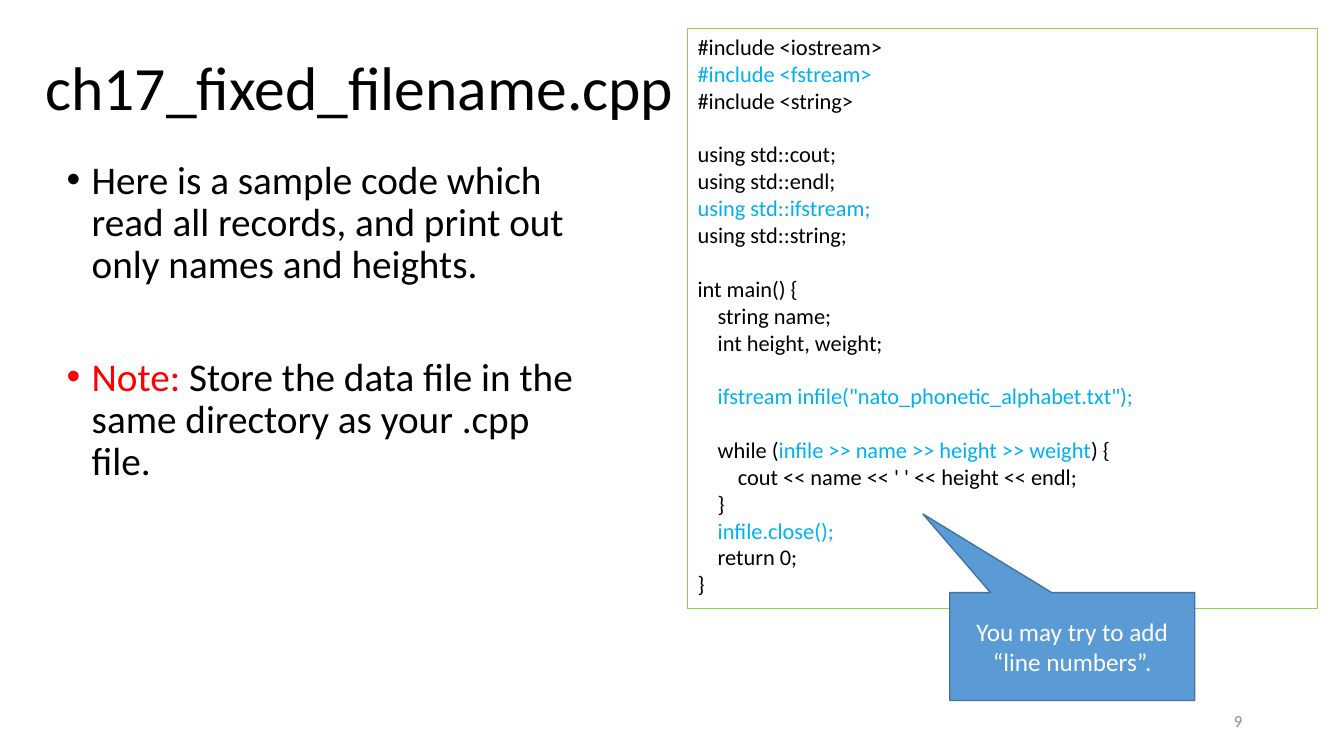
from dataclasses import dataclass

import pptx
import pptx.dml.color
import pptx.enum.shapes
import pptx.enum.text
import pptx.util

ALIGN = pptx.enum.text.PP_ALIGN
ANCHOR = pptx.enum.text.MSO_ANCHOR
Pt = pptx.util.Pt

PX = 9144  # EMU in one px, 100 px to the inch
FONT = "Calibri"
BLACK, RED, CYAN, GREY, WHITE = "000000", "FF0000", "00B0F0", "8C8C8C", "FFFFFF"
GREEN, BLUE, NAVY = "92D050", "5B9BD5", "43739E"
CODE_SIZE, CODE_GAP, CODE_STEP = 16, 19.2, 20
BULLET_INDENT = 25


@dataclass(frozen=True)
class Span:
    text: str
    colour: str = BLACK


@dataclass(frozen=True)
class Para:
    spans: tuple[Span, ...]
    gap: float = 0
    level: int = 0


@dataclass(frozen=True)
class Box:
    left: int
    top: int
    width: int
    height: int

    def emu(self) -> tuple[int, ...]:
        return tuple(px * PX for px in (self.left, self.top, self.width, self.height))


def line(text: str, colour: str = BLACK, gap: float = 0, level: int = 0) -> Para:
    return Para((Span(text, colour),), gap, level)


TITLE = (line("ch17_fixed_filename.cpp"),)
NOTES = (
    line("Here is a sample code which read all records, "
         "and print out only names and heights.", gap=10),
    Para((Span("Note:", RED),
          Span(" Store the data file in the same directory as your .cpp file.")), 50),
)
CODE = (
    line("#include <iostream>"),
    line("#include <fstream>", CYAN),
    line("#include <string>"),
    line("using std::cout;", gap=CODE_GAP),
    line("using std::endl;"),
    line("using std::ifstream;", CYAN),
    line("using std::string;"),
    line("int main() {", gap=CODE_GAP),
    line("string name;", level=1),
    line("int height, weight;", level=1),
    line('ifstream infile("nato_phonetic_alphabet.txt");', CYAN, CODE_GAP, 1),
    Para((Span("while ("), Span("infile >> name >> height >> weight", CYAN),
          Span(") {")), CODE_GAP, 1),
    line("cout << name << ' ' << height << endl;", level=2),
    line("}", level=1),
    line("infile.close();", CYAN, level=1),
    line("return 0;", level=1),
    line("}"),
)
CALLOUT = (line("You may try to add “line numbers”.", WHITE),)
PAGE_NUMBER = (line("9", GREY),)


def rgb(colour: str) -> pptx.dml.color.RGBColor:
    return pptx.dml.color.RGBColor.from_string(colour)


def apply(target: object, values: dict[str, object]) -> None:
    for name, value in values.items():
        setattr(target, name, value)


def place(shape: pptx.shapes.base.BaseShape, box: Box) -> None:
    apply(shape, dict(zip(("left", "top", "width", "height"), box.emu())))


def write(shape: pptx.shapes.base.BaseShape, paras: tuple[Para, ...], size: int,
          align: ALIGN = ALIGN.LEFT, anchor: ANCHOR = ANCHOR.TOP,
          spacing: float = 1.0) -> None:
    frame = shape.text_frame
    apply(frame, {"word_wrap": True, "vertical_anchor": anchor,
                  "auto_size": pptx.enum.text.MSO_AUTO_SIZE.NONE})
    for index, para in enumerate(paras):
        paragraph = frame.add_paragraph() if index else frame.paragraphs[0]
        apply(paragraph, {"alignment": align, "line_spacing": spacing,
                          "space_before": Pt(para.gap), "space_after": Pt(0)})
        if para.level:
            indent(paragraph, para.level * CODE_STEP)
        for span in para.spans:
            run = paragraph.add_run()
            run.text = span.text
            apply(run.font, {"name": FONT, "size": Pt(size)})
            run.font.color.rgb = rgb(span.colour)


def indent(paragraph: pptx.text.text._Paragraph, margin: int, first: int = 0) -> None:
    properties = paragraph._p.get_or_add_pPr()
    properties.set("marL", str(margin * PX))
    properties.set("indent", str(first * PX))


def outline(shape: pptx.shapes.autoshape.Shape, colour: str, width: float) -> None:
    shape.line.color.rgb = rgb(colour)
    shape.line.width = Pt(width)


def main() -> None:
    deck = pptx.Presentation()
    apply(deck, {"slide_width": 1333 * PX, "slide_height": 750 * PX})
    page = deck.slides.add_slide(deck.slide_layouts[1])
    shapes = page.shapes

    title = shapes.title
    place(title, Box(35, 17, 1150, 145))
    write(title, TITLE, 44, anchor=ANCHOR.MIDDLE, spacing=0.9)

    notes = page.placeholders[1]
    place(notes, Box(56, 154, 529, 581))
    write(notes, NOTES, 28, spacing=0.9)
    for paragraph in notes.text_frame.paragraphs:
        indent(paragraph, BULLET_INDENT, -BULLET_INDENT)

    number = shapes.add_textbox(*Box(942, 695, 300, 40).emu())
    write(number, PAGE_NUMBER, 12, ALIGN.RIGHT, ANCHOR.MIDDLE)

    code = shapes.add_textbox(*Box(682, 28, 625, 576).emu())
    outline(code, GREEN, 0.75)
    write(code, CODE, CODE_SIZE)

    callout = shapes.add_shape(
        pptx.enum.shapes.MSO_SHAPE.RECTANGULAR_CALLOUT, *Box(942, 588, 243, 107).emu())
    callout.adjustments[0], callout.adjustments[1] = -0.61, -1.23
    callout.shadow.inherit = False
    callout.fill.solid()
    callout.fill.fore_color.rgb = rgb(BLUE)
    outline(callout, NAVY, 1)
    write(callout, CALLOUT, 18, ALIGN.CENTER, ANCHOR.MIDDLE)

    deck.save("out.pptx")


if __name__ == "__main__":
    main()
